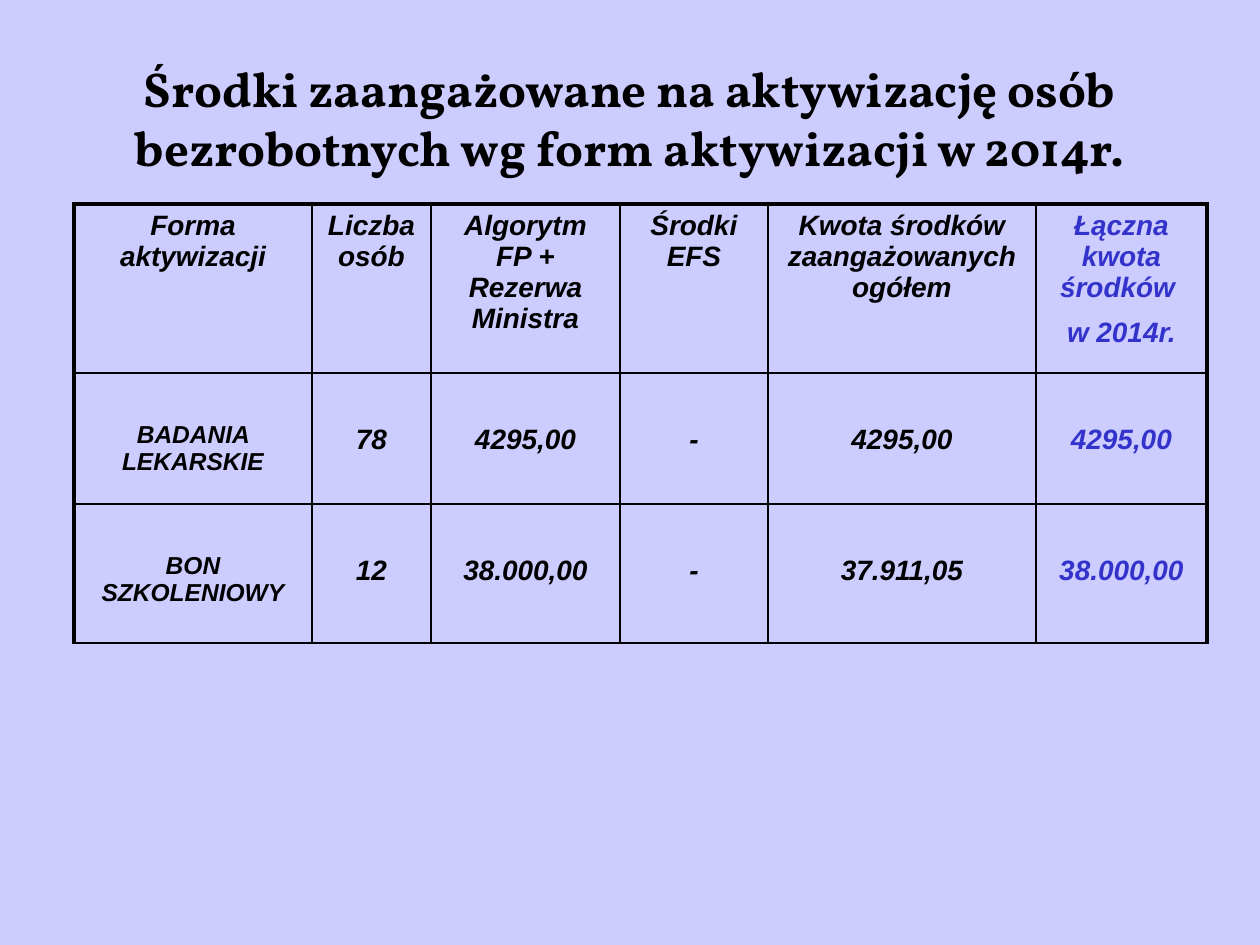
from dataclasses import dataclass

from lxml.etree import SubElement
from pptx import Presentation
from pptx.dml.color import RGBColor
from pptx.enum.text import MSO_ANCHOR as Anchor, PP_ALIGN as Align
from pptx.oxml.ns import qn
from pptx.util import Emu, Pt

EMU_PER_PX = 914400 / 126
BLACK, BLUE, LAVENDER = "000000", "3333CC", "CCCCFF"
THIN, THICK = 1, 2.25


@dataclass(frozen=True)
class Entry:
    lines: tuple[str, ...]
    size: int = 16
    color: str = BLACK
    top: int = 6


@dataclass(frozen=True)
class Edges:
    left: float
    right: float
    top: float
    bottom: float


def px(length: int) -> Emu:
    return Emu(round(length * EMU_PER_PX))


def rgb(color: str) -> RGBColor:
    return RGBColor.from_string(color)


def style(paragraph, font_name: str, size: int, color: str, italic: bool = False) -> None:
    paragraph.alignment = Align.CENTER
    font = paragraph.font
    font.name, font.size, font.bold, font.italic = font_name, Pt(size), True, italic
    font.color.rgb = rgb(color)


def draw_borders(cell, edges: Edges) -> None:
    properties = cell._tc.get_or_add_tcPr()
    widths = {"lnL": edges.left, "lnR": edges.right, "lnT": edges.top, "lnB": edges.bottom}
    for tag, width in widths.items():
        line = SubElement(properties, qn(f"a:{tag}"), w=str(int(Pt(width))))
        fill = SubElement(line, qn("a:solidFill"))
        SubElement(fill, qn("a:srgbClr"), val=BLACK)


def fill_cell(cell, entry: Entry, edges: Edges) -> None:
    cell.margin_top = px(entry.top)
    frame = cell.text_frame
    frame.text = "\n".join(entry.lines)
    for paragraph in frame.paragraphs:
        style(paragraph, "Arial", entry.size, entry.color, italic=True)
        paragraph.space_before = Pt(8)
    draw_borders(cell, edges)
    cell.fill.background()


def form_row(form: str, *amounts: str) -> list[Entry]:
    *parts, total = amounts
    return [
        Entry((form,), size=14, top=48),
        *(Entry((part,), top=51) for part in parts),
        Entry((total,), color=BLUE, top=51),
    ]


HEADINGS = ("Forma aktywizacji", "Liczba osób", "Algorytm FP + Rezerwa Ministra",
            "Środki EFS", "Kwota środków zaangażowanych ogółem")
ROWS = [
    [*(Entry((heading,)) for heading in HEADINGS),
     Entry(("Łączna kwota środków ", "w 2014r."), color=BLUE)],
    form_row("BADANIA LEKARSKIE", "78", "4295,00", "-", "4295,00", "4295,00"),
    form_row("BON SZKOLENIOWY", "12", "38.000,00", "-", "37.911,05", "38.000,00"),
]
COLUMN_WIDTHS = (238, 119, 189, 148, 268, 171)
ROW_HEIGHTS = (169, 131, 139)


def add_title(slide, text: str) -> None:
    title = slide.shapes.add_textbox(px(63), px(18), px(1133), px(198))
    frame = title.text_frame
    frame.word_wrap = True
    frame.vertical_anchor = Anchor.MIDDLE
    frame.text = text
    style(frame.paragraphs[0], "Vollkorn", 28, BLACK)


def add_funding_table(slide) -> None:
    table = slide.shapes.add_table(
        len(ROWS), len(COLUMN_WIDTHS), px(74), px(204),
        px(sum(COLUMN_WIDTHS)), px(sum(ROW_HEIGHTS))).table
    table.first_row = table.horz_banding = False
    for column, width in zip(table.columns, COLUMN_WIDTHS):
        column.width = px(width)
    for row, height in zip(table.rows, ROW_HEIGHTS):
        row.height = px(height)
    last = len(COLUMN_WIDTHS) - 1
    for r, entries in enumerate(ROWS):
        for c, entry in enumerate(entries):
            edges = Edges(
                left=THICK if c == 0 else THIN,
                right=THICK if c == last else THIN,
                top=THICK if r == 0 else THIN,
                bottom=THIN)
            fill_cell(table.cell(r, c), entry, edges)


def main() -> None:
    deck = Presentation()
    deck.slide_width, deck.slide_height = px(1260), px(945)
    slide = deck.slides.add_slide(deck.slide_layouts[6])
    backdrop = slide.background.fill
    backdrop.solid()
    backdrop.fore_color.rgb = rgb(LAVENDER)
    add_title(slide, "Środki zaangażowane na aktywizację osób bezrobotnych "
                     "wg form aktywizacji w 2014r.")
    add_funding_table(slide)
    deck.save("out.pptx")


if __name__ == "__main__":
    main()
